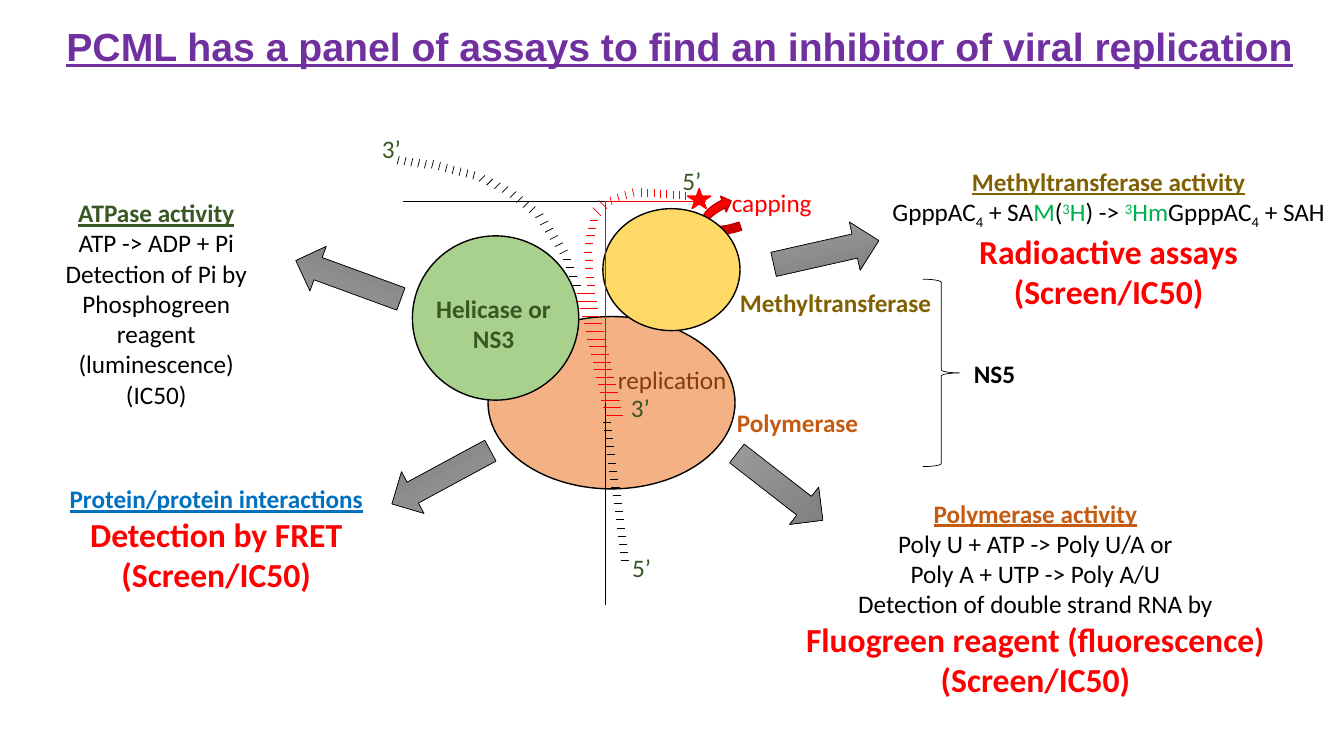
from lxml import etree
from pptx import Presentation
from pptx import util as u
from pptx.dml import color
from pptx.enum import shapes, text
from pptx.oxml import ns

COLORS = {
    "black": "000000", "red": "FF0000", "dark_red": "C00000", "purple": "7030A0",
    "green": "385723", "blue": "0070C0", "gold": "806000", "orange": "C55A11",
    "brown": "843C0B", "label_green": "00B050", "peach": "F4B183",
    "leaf": "A9D18E", "yellow": "FFD966", "gray_light": "9D9D9D", "gray_dark": "7C7C7C",
}
SHAPE = shapes.MSO_SHAPE


def rgb(name):
    return color.RGBColor.from_string(COLORS[name])


def bezier(start, c1, c2, end, steps=24):
    """Points along one cubic segment, without its start."""
    points = []
    for i in range(1, steps + 1):
        t = i / steps
        weights = ((1 - t) ** 3, 3 * t * (1 - t) ** 2, 3 * t * t * (1 - t), t ** 3)
        points.append(tuple(sum(w * p[axis] for w, p in zip(weights, (start, c1, c2, end)))
                            for axis in (0, 1)))
    return points


class AssaySlide:
    def __init__(self, prs):
        self.slide = prs.slides.add_slide(prs.slide_layouts[6])
        self.shapes = self.slide.shapes
        self.font = "Calibri"

    def style(self, r, name, size=18, bold=False, underline=False, font=None):
        r.font.name = font or self.font
        r.font.size = u.Pt(size)
        r.font.bold = bold
        r.font.underline = underline
        r.font.color.rgb = rgb(name)

    def box(self, at, wrap=False):
        tf = self.shapes.add_textbox(*map(u.Inches, at)).text_frame
        tf.word_wrap = wrap
        tf.auto_size = text.MSO_AUTO_SIZE.SHAPE_TO_FIT_TEXT
        return tf

    def label(self, at, words, name, wrap=False, center=False, **style):
        tf = self.box(at, wrap)
        tf.text = words
        for p in tf.paragraphs:
            if center:
                p.alignment = text.PP_ALIGN.CENTER
            for r in p.runs:
                self.style(r, name, **style)

    def assay(self, at, heading, name, body, results):
        """Heading, plain lines and large red results; a line may be a list of
        (text, colour, baseline) parts."""
        tf = self.box(at)
        lines = [(heading, name, dict(bold=True, underline=True))]
        lines += [(line, "black", {}) for line in body]
        lines += [(line, "red", dict(size=24, bold=True)) for line in results]
        for i, (line, line_color, style) in enumerate(lines):
            p = tf.add_paragraph() if i else tf.paragraphs[0]
            p.alignment = text.PP_ALIGN.CENTER
            parts = [(line, line_color, 0)] if isinstance(line, str) else line
            for words, part_color, baseline in parts:
                r = p.add_run()
                r.text = words
                self.style(r, part_color, **style)
                if baseline:
                    r.font._element.set("baseline", str(baseline * 1000))

    def shape(self, kind, at, fill=None, line="black", width=1, rotation=0):
        sp = self.shapes.add_shape(kind, *map(u.Inches, at))
        sp.shadow.inherit = False
        sp.rotation = rotation
        sp.line.color.rgb = rgb(line)
        sp.line.width = u.Pt(width)
        if fill:
            sp.fill.solid()
            sp.fill.fore_color.rgb = rgb(fill)
        else:
            sp.fill.background()
        return sp

    def gray_arrow(self, kind, at, rotation):
        sp = self.shape(kind, at, width=0.5, rotation=rotation)
        sp.fill.gradient()
        sp.fill.gradient_angle = 270
        for stop, name in zip(sp.fill.gradient_stops, ("gray_light", "gray_dark")):
            stop.color.rgb = rgb(name)

    def strand(self, name, start, *segments):
        points = [start]
        for segment in segments:
            points += bezier(points[-1], *segment)
        builder = self.shapes.build_freeform(*start, scale=u.Inches(1))
        builder.add_line_segments(points[1:], close=False)
        sp = builder.convert_to_shape()
        sp.shadow.inherit = False
        sp.fill.background()
        sp.line.color.rgb = rgb(name)
        sp.line.width = u.Pt(0.5)

    def bases(self, name, count, first, last, tick):
        """Evenly spaced parallel ticks from first to last."""
        for i in range(count):
            x, y = (a + (b - a) * i / (count - 1) for a, b in zip(first, last))
            ends = (x, y, x + tick[0], y + tick[1])
            line = self.shapes.add_connector(shapes.MSO_CONNECTOR.STRAIGHT, *map(u.Inches, ends))
            line.line.color.rgb = rgb(name)
            line.line.width = u.Pt(0.5)
            etree.SubElement(line._element.spPr, ns.qn("a:effectLst"))


def main():
    prs = Presentation()
    prs.slide_width, prs.slide_height = u.Inches(13.33), u.Inches(7.5)
    s = AssaySlide(prs)

    s.label((0.56, 0.17, 12.51, 0.57),
            "PCML has a panel of assays to find an inhibitor of viral replication",
            "purple", size=28, bold=True, underline=True, font="Arial")

    for kind, at, rotation in (
            (SHAPE.RIGHT_ARROW, (7.66, 2.26, 1.07, 0.49), 347.3),
            (SHAPE.DOWN_ARROW, (7.5, 4.29, 0.47, 1.08), 307.9),
            (SHAPE.RIGHT_ARROW, (2.9, 2.54, 1.11, 0.47), 200.1),
            (SHAPE.RIGHT_ARROW, (3.82, 4.5, 1.11, 0.47), 151.6)):
        s.gray_arrow(kind, at, rotation)

    screen = "(Screen/IC50)"
    s.assay((0.34, 1.91, 2.42, 1.92), "ATPase activity", "green",
            ["ATP -> ADP + Pi", "Detection of Pi by", "Phosphogreen reagent",
             "(luminescence)", "(IC50)"], [])
    s.assay((0.58, 4.75, 3.13, 1.21), "Protein/protein interactions", "blue",
            [], ["Detection by FRET", screen])
    capping_reaction = [
        ("GpppAC", "black", 0), ("4", "black", -25), (" + SA", "black", 0),
        ("M", "label_green", 0), ("(", "black", 0), ("3", "label_green", 30),
        ("H", "label_green", 0), (") -> ", "black", 0), ("3", "label_green", 30),
        ("Hm", "label_green", 0), ("GpppAC", "black", 0), ("4", "black", -25),
        (" + SAH", "black", 0)]
    s.assay((8.7, 1.6, 4.59, 1.51), "Methyltransferase activity", "gold",
            [capping_reaction], ["Radioactive assays", screen])
    s.assay((7.88, 4.89, 4.78, 2.12), "Polymerase activity", "orange",
            ["Poly U + ATP -> Poly U/A or", "Poly A + UTP -> Poly A/U",
             "Detection of double strand RNA by"],
            ["Fluogreen reagent (fluorescence)", screen])

    s.label((7.21, 3.99, 1.41, 0.4), "Polymerase", "orange", bold=True)
    s.label((7.24, 2.8, 2.11, 0.4), "Methyltransferase", "gold", bold=True)

    s.shape(SHAPE.CURVED_DOWN_ARROW, (6.94, 1.99, 0.39, 0.33), "red", "dark_red", rotation=250)
    for at, fill in (((4.84, 3.14, 2.45, 1.71), "peach"),
                     ((4.09, 2.34, 1.65, 1.63), "leaf"),
                     ((5.98, 2.07, 1.36, 1.21), "yellow")):
        s.shape(SHAPE.OVAL, at, fill)

    s.strand("black", (6.16, 5.61),
             ((6.03, 4.37), (5.9, 3.12), (5.52, 2.45)),
             ((5.14, 1.79), (4.51, 1.7), (3.88, 1.61)))
    s.strand("red", (6.87, 1.98),
             ((6.45, 1.93), (6.02, 1.89), (5.91, 2.25)),
             ((5.79, 2.61), (5.99, 3.37), (6.19, 4.14)))
    s.shape(SHAPE.STAR_5_POINT, (6.82, 1.87, 0.23, 0.2), "red", "red")
    for left, top, end in ((6.17, 5.43, "5’"), (6.67, 1.59, "5’"),
                           (6.16, 3.84, "3’"), (3.69, 1.27, "3’")):
        s.label((left, top, 0.39, 0.4), end, "green", wrap=True)

    for run in (
            ("red", 17, (5.9, 2.91), (6.18, 4.12), (-0.18, 0)),
            ("red", 5, (5.9, 2.83), (5.87, 2.5), (-0.08, 0)),
            ("red", 4, (5.88, 2.41), (5.93, 2.19), (-0.08, 0)),
            ("red", 2, (5.88, 2.06), (5.94, 1.99), (0.08, 0.08)),
            ("red", 4, (6.05, 1.95), (6.27, 1.87), (0.02, 0.08)),
            ("red", 8, (6.36, 1.87), (6.8, 1.9), (0, 0.08)),
            ("black", 18, (6.06, 4.19), (6.24, 5.56), (-0.08, 0)),
            ("black", 4, (5.76, 2.83), (5.66, 2.57), (-0.08, 0)),
            ("black", 6, (5.55, 2.52), (5.31, 2.16), (0.08, -0.04)),
            ("black", 4, (5.25, 2.11), (5.06, 1.96), (0.06, -0.06)),
            ("black", 4, (4.98, 1.91), (4.75, 1.8), (0.06, -0.06)),
            ("black", 7, (4.69, 1.78), (4.28, 1.67), (0.02, -0.08)),
            ("black", 5, (4.21, 1.67), (3.94, 1.63), (0.02, -0.08))):
        s.bases(*run)

    s.label((7.16, 1.81, 1, 0.4), "capping", "red")
    s.label((6.03, 3.57, 1.29, 0.4), "replication", "brown")
    s.label((4.22, 2.86, 1.35, 0.71), "Helicase or\nNS3", "green", center=True, bold=True)
    s.shape(SHAPE.RIGHT_BRACE, (9.15, 2.77, 0.37, 1.86), width=0.5)
    s.label((9.56, 3.51, 0.62, 0.4), "NS5", "black", bold=True)

    prs.save("out.pptx")


if __name__ == "__main__":
    main()
